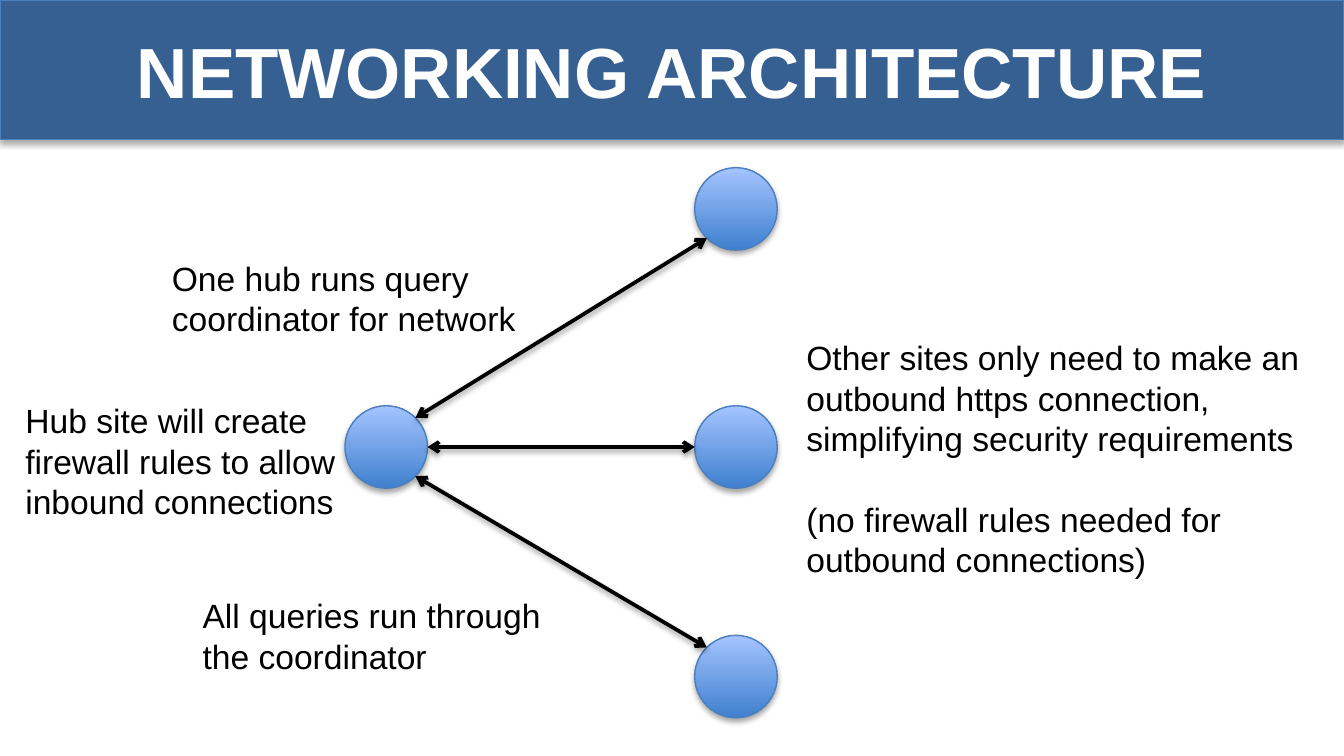
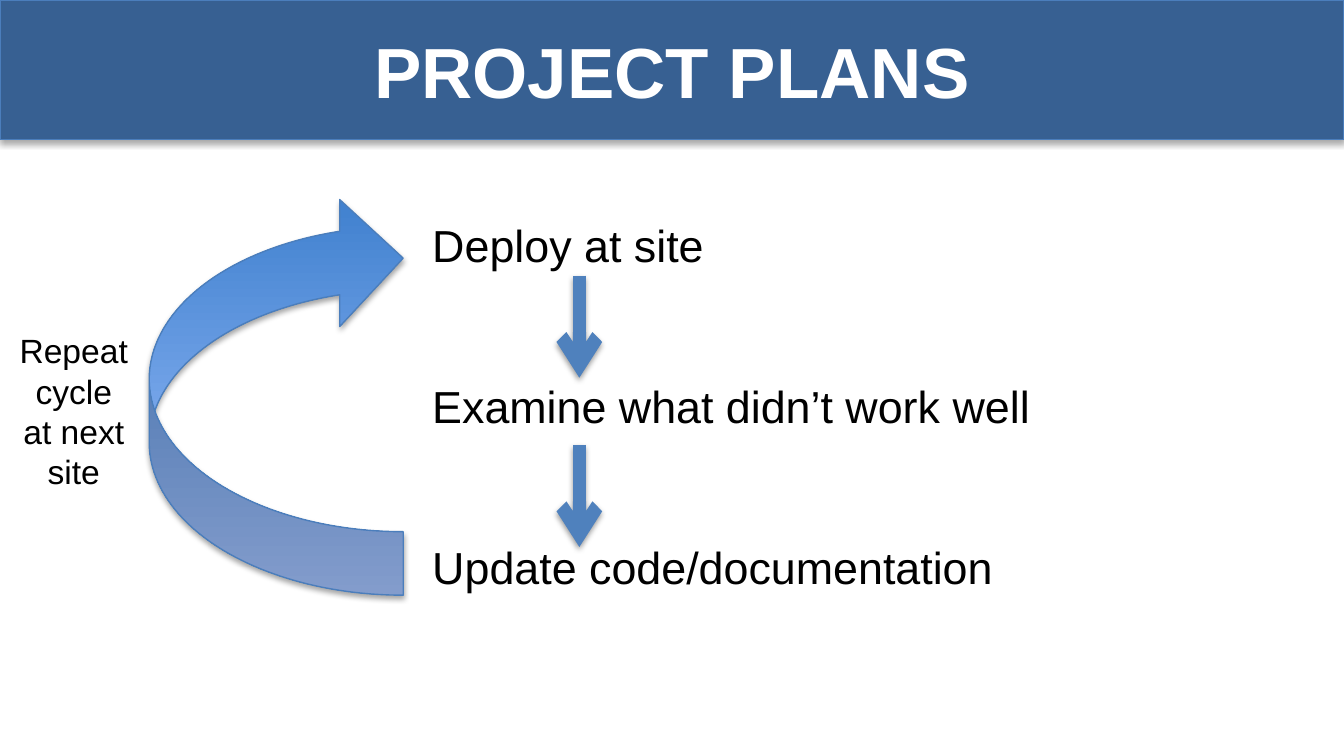
from dataclasses import dataclass
from math import hypot, sqrt

from lxml.etree import SubElement
from pptx import Presentation
from pptx.dml.color import RGBColor as RGB
from pptx.enum.shapes import MSO_CONNECTOR as Connector, MSO_SHAPE as Preset
from pptx.enum.text import MSO_ANCHOR as Anchor, MSO_AUTO_SIZE as AutoSize, PP_ALIGN as Align
from pptx.oxml.ns import qn
from pptx.util import Cm, Pt


@dataclass(frozen=True)
class Theme:
    font: str = "Arial"
    band: RGB = RGB(0x37, 0x60, 0x92)
    outline: RGB = RGB(0x4B, 0x7E, 0xBC)
    gradient: tuple = (RGB(0x3F, 0x80, 0xCE), RGB(0xA4, 0xC4, 0xFF))
    flow: RGB = RGB(0x4F, 0x81, 0xBD)
    white: RGB = RGB(0xFF, 0xFF, 0xFF)
    black: RGB = RGB(0, 0, 0)
    title_size: int = 38
    step_size: int = 24
    note_size: int = 18
    line_height: float = 1.2


THEME = Theme()

# All places and lengths are in centimetres.
WIDTH, HEIGHT, BAND_HEIGHT = 25.4, 14.29, 2.64

NETWORK_TITLE = "NETWORKING ARCHITECTURE"
NODE_SIZE = 1.56
HUB = (7.3, 8.45)
SITES = [(13.91, 3.95), (13.91, 8.45), (13.91, 12.79)]
# Box, then groups of lines; one line's height parts the groups.
NETWORK_NOTES = [
    ((3.0, 4.75, 7.06, 1.8), [["One hub runs query", "coordinator for network"]]),
    ((3.58, 11.13, 7.01, 1.8), [["All queries run through", "the coordinator"]]),
    ((14.99, 6.25, 9.93, 4.88), [
        ["Other sites only need to make an", "outbound https connection,",
         "simplifying security requirements"],
        ["(no firewall rules needed for", "outbound connections)"],
    ]),
    ((0.23, 7.44, 6.68, 2.57), [["Hub site will create", "firewall rules to allow",
                                 "inbound connections"]]),
]

PLANS_TITLE = "PROJECT PLANS"
STEPS = ["Deploy at site", "Examine what didn’t work well", "Update code/documentation"]
STEPS_BOX = (7.92, 3.99, 11.91, 8.46)
STEP_GAP_LINES = 2
FLOW_X, FLOW_TOP, FLOW_LENGTH, FLOW_PITCH = 10.95, 5.21, 1.93, 3.2
CYCLE_ARROW = (2.82, 3.68, 4.8, 7.57)
CYCLE_BOX = (0.1, 6.12, 2.59, 3.33)
CYCLE_LINES = ["Repeat", "cycle", "at next", "site"]


def cm(values):
    return [Cm(value) for value in values]


def apply(target, formats):
    for name, value in formats.items():
        setattr(target, name, value)


def add_shadow(shape, opacity, distance):
    """Give the shape a soft black shadow straight below it."""
    effects = SubElement(shape._element.spPr, qn("a:effectLst"))
    shadow = SubElement(effects, qn("a:outerShdw"), blurRad=str(Pt(3.1)),
                        dist=str(Pt(distance)), dir="5400000", rotWithShape="0")
    color = SubElement(shadow, qn("a:srgbClr"), val=str(THEME.black))
    SubElement(color, qn("a:alpha"), val=str(opacity * 1000))


def add_preset(slide, preset, box, fill=None):
    """Add an outlined shape; without a fill colour it gets the gradient."""
    shape = slide.shapes.add_shape(preset, *cm(box))
    if fill is None:
        shape.fill.gradient()
        shape.fill.gradient_angle = 90
        for stop, color in zip(shape.fill.gradient_stops, THEME.gradient):
            stop.color.rgb = color
    else:
        shape.fill.solid()
        shape.fill.fore_color.rgb = fill
    shape.line.color.rgb = THEME.outline
    shape.line.width = Pt(0.75)
    add_shadow(shape, 35, 1.8)
    return shape


def write(paragraph, text, size, color, bold=False):
    run = paragraph.add_run()
    run.text = text
    apply(run.font, {"name": THEME.font, "size": Pt(size), "bold": bold})
    run.font.color.rgb = color


def add_text(slide, box, groups, size, gap_lines=1, align=Align.LEFT):
    frame = slide.shapes.add_textbox(*cm(box)).text_frame
    apply(frame, {"word_wrap": False, "auto_size": AutoSize.SHAPE_TO_FIT_TEXT})
    height = THEME.line_height * size
    paragraph = None
    for group in groups:
        for index, line in enumerate(group):
            first = paragraph is None
            paragraph = frame.paragraphs[0] if first else frame.add_paragraph()
            gap = gap_lines * height if index == 0 and not first else 0
            apply(paragraph, {"alignment": align, "line_spacing": Pt(height),
                              "space_before": Pt(gap)})
            write(paragraph, line, size, THEME.black)


def add_arrow(slide, start, end, color, width, ends):
    connector = slide.shapes.add_connector(Connector.STRAIGHT, *cm(start + end))
    connector.line.color.rgb = color
    connector.line.width = Pt(width)
    line = connector._element.spPr.find(qn("a:ln"))
    for name in ends:
        SubElement(line, qn(f"a:{name}"), type="arrow")
    add_shadow(connector, 38, 1.6)


def add_titled_slide(presentation, title):
    slide = presentation.slides.add_slide(presentation.slide_layouts[6])
    band = add_preset(slide, Preset.RECTANGLE, (0, 0, WIDTH, BAND_HEIGHT), THEME.band)
    band.text_frame.vertical_anchor = Anchor.MIDDLE
    paragraph = band.text_frame.paragraphs[0]
    paragraph.alignment = Align.CENTER
    write(paragraph, title, THEME.title_size, THEME.white, bold=True)
    return slide


def rim_point(center, target):
    """Point of a node's rim facing the target, on the nearest horizontal or diagonal."""
    (x, y), (target_x, target_y) = center, target
    side_x = 1 if target_x > x else -1
    side_y = (target_y > y) - (target_y < y)
    reach = NODE_SIZE / 2 / hypot(side_x, side_y)
    return x + side_x * reach, y + side_y * reach


def build_network(presentation):
    slide = add_titled_slide(presentation, NETWORK_TITLE)
    for x, y in [HUB, *SITES]:
        corner = (x - NODE_SIZE / 2, y - NODE_SIZE / 2)
        add_preset(slide, Preset.OVAL, (*corner, NODE_SIZE, NODE_SIZE))
    for site in SITES:
        add_arrow(slide, rim_point(HUB, site), rim_point(site, HUB),
                  THEME.black, 2, ("headEnd", "tailEnd"))
    for box, groups in NETWORK_NOTES:
        add_text(slide, box, groups, THEME.note_size)


def build_plans(presentation):
    slide = add_titled_slide(presentation, PLANS_TITLE)
    add_preset(slide, Preset.CURVED_LEFT_ARROW, CYCLE_ARROW).rotation = 180
    add_text(slide, STEPS_BOX, [[step] for step in STEPS], THEME.step_size, STEP_GAP_LINES)
    for index in range(len(STEPS) - 1):
        top = FLOW_TOP + index * FLOW_PITCH
        add_arrow(slide, (FLOW_X, top), (FLOW_X, top + FLOW_LENGTH),
                  THEME.flow, 7, ("tailEnd",))
    add_text(slide, CYCLE_BOX, [CYCLE_LINES], THEME.note_size, align=Align.CENTER)


def main():
    presentation = Presentation()
    apply(presentation, {"slide_width": Cm(WIDTH), "slide_height": Cm(HEIGHT)})
    build_network(presentation)
    build_plans(presentation)
    presentation.save("out.pptx")


if __name__ == "__main__":
    main()
